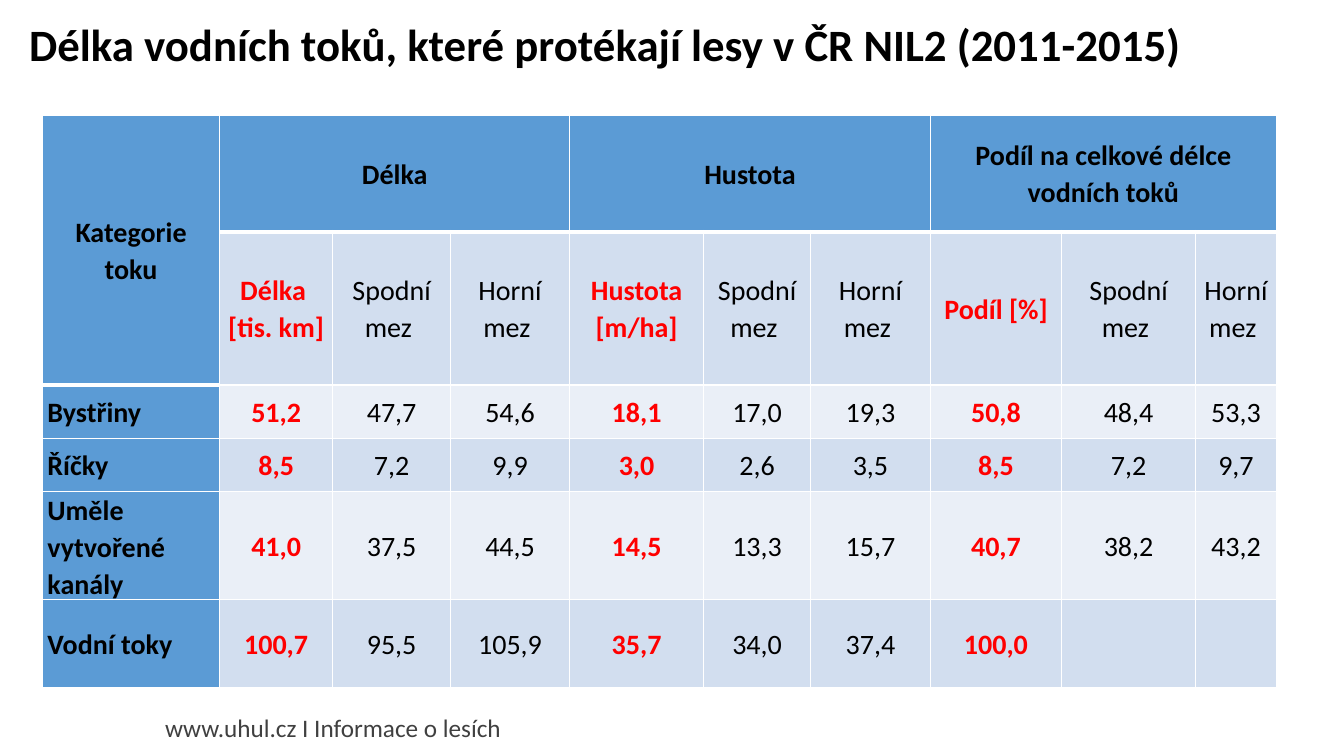
"""Build the slide on the length of streams flowing through Czech forests."""
from lxml.etree import SubElement
from pptx import Presentation
from pptx.dml.color import RGBColor
from pptx.enum.text import MSO_ANCHOR as Anchor, MSO_AUTO_SIZE as AutoSize, PP_ALIGN as Align
from pptx.oxml.ns import qn
from pptx.util import Inches, Pt

COLORS = {
    "header": "5B9BD5", "dark band": "D2DEEF", "light band": "EAEFF7",
    "border": "FFFFFF", "text": "000000", "estimate": "FF0000", "footer": "404040",
}
COLUMN_WIDTHS = [1.76, 1.12, 1.17, 1.18, 1.33, 1.06, 1.19, 1.3, 1.33, 0.8]
ROW_HEIGHTS = [1.16, 1.52, 0.53, 0.53, 1.03, 0.87]
GROUP_STARTS = (1, 4, 7)
LOWER, UPPER = "Spodní mez ", "Horní mez "
ROWS = [
    ["Kategorie toku", "Délka", "", "", "Hustota", "", "",
     "Podíl na celkové délce vodních toků", "", ""],
    ["", "Délka \n[tis. km]", LOWER, UPPER, "Hustota [m/ha]", LOWER, UPPER,
     "Podíl [%]", LOWER, UPPER],
    ["Bystřiny", "51,2", "47,7", "54,6", "18,1", "17,0", "19,3", "50,8", "48,4", "53,3"],
    ["Říčky", "8,5", "7,2", "9,9", "3,0", "2,6", "3,5", "8,5", "7,2", "9,7"],
    ["Uměle vytvořené kanály", "41,0", "37,5", "44,5", "14,5", "13,3", "15,7",
     "40,7", "38,2", "43,2"],
    ["Vodní toky", "100,7", "95,5", "105,9", "35,7", "34,0", "37,4", "100,0", "", ""],
]


def format_paragraph(para, size, color, bold, align, spacing):
    para.alignment = align
    para.line_spacing = spacing
    para.font.name = "Calibri"
    para.font.size = Pt(size)
    para.font.bold = bold
    para.font.color.rgb = RGBColor.from_string(COLORS[color])


def add_border(cell, side, width):
    line = SubElement(cell._tc.get_or_add_tcPr(), qn(f"a:ln{side}"), w=str(Pt(width)))
    fill = SubElement(line, qn("a:solidFill"))
    SubElement(fill, qn("a:srgbClr"), val=COLORS["border"])


deck = Presentation()
deck.slide_width, deck.slide_height = Inches(13.33), Inches(7.5)
page = deck.slides.add_slide(deck.slide_layouts[5])

title = page.shapes.title
title.left, title.top = Inches(0.02), Inches(0.17)
title.width, title.height = Inches(12.07), Inches(0.6)
title.text_frame.text = "Délka vodních toků, které protékají lesy v ČR NIL2 (2011-2015) "
title.text_frame.auto_size = AutoSize.NONE
title.text_frame.vertical_anchor = Anchor.MIDDLE
format_paragraph(title.text_frame.paragraphs[0], 32, "text", True, Align.CENTER, 0.9)

footer = page.shapes.add_textbox(Inches(1.54), Inches(7.05), Inches(6.23), Inches(0.4))
footer.text_frame.word_wrap = True
footer.text_frame.text = "www.uhul.cz I Informace o lesích"
format_paragraph(footer.text_frame.paragraphs[0], 18, "footer", False, Align.LEFT, 0.9)

table = page.shapes.add_table(
    len(ROW_HEIGHTS), len(COLUMN_WIDTHS), Inches(0.42), Inches(1.14),
    Inches(sum(COLUMN_WIDTHS)), Inches(sum(ROW_HEIGHTS))).table
for column, width in zip(table.columns, COLUMN_WIDTHS):
    column.width = Inches(width)
for row, height in zip(table.rows, ROW_HEIGHTS):
    row.height = Inches(height)

for r, texts in enumerate(ROWS):
    for c, text in enumerate(texts):
        cell = table.cell(r, c)
        is_header = r == 0 or c == 0
        is_estimate = not is_header and c in GROUP_STARTS
        header_end = 1 if c == 0 else 0
        add_border(cell, "L", 1)
        add_border(cell, "R", 1)
        add_border(cell, "T", 3 if r == header_end + 1 else 1)
        add_border(cell, "B", 3 if r == header_end else 1)
        band = "header" if is_header else "dark band" if r % 2 else "light band"
        cell.fill.solid()
        cell.fill.fore_color.rgb = RGBColor.from_string(COLORS[band])
        cell.vertical_anchor = Anchor.MIDDLE
        cell.margin_left = cell.margin_right = Inches(0.05)
        cell.margin_top = cell.margin_bottom = 0
        cell.text = text
        for para in cell.text_frame.paragraphs:
            format_paragraph(para, 20, "estimate" if is_estimate else "text",
                             is_header or is_estimate,
                             Align.LEFT if c == 0 and r > 1 else Align.CENTER, 1.07)

table.cell(0, 0).text_frame.paragraphs[0].space_after = Pt(8)
table.cell(0, 0).merge(table.cell(1, 0))
for start in GROUP_STARTS:
    table.cell(0, start).merge(table.cell(0, start + 2))

deck.save("out.pptx")
